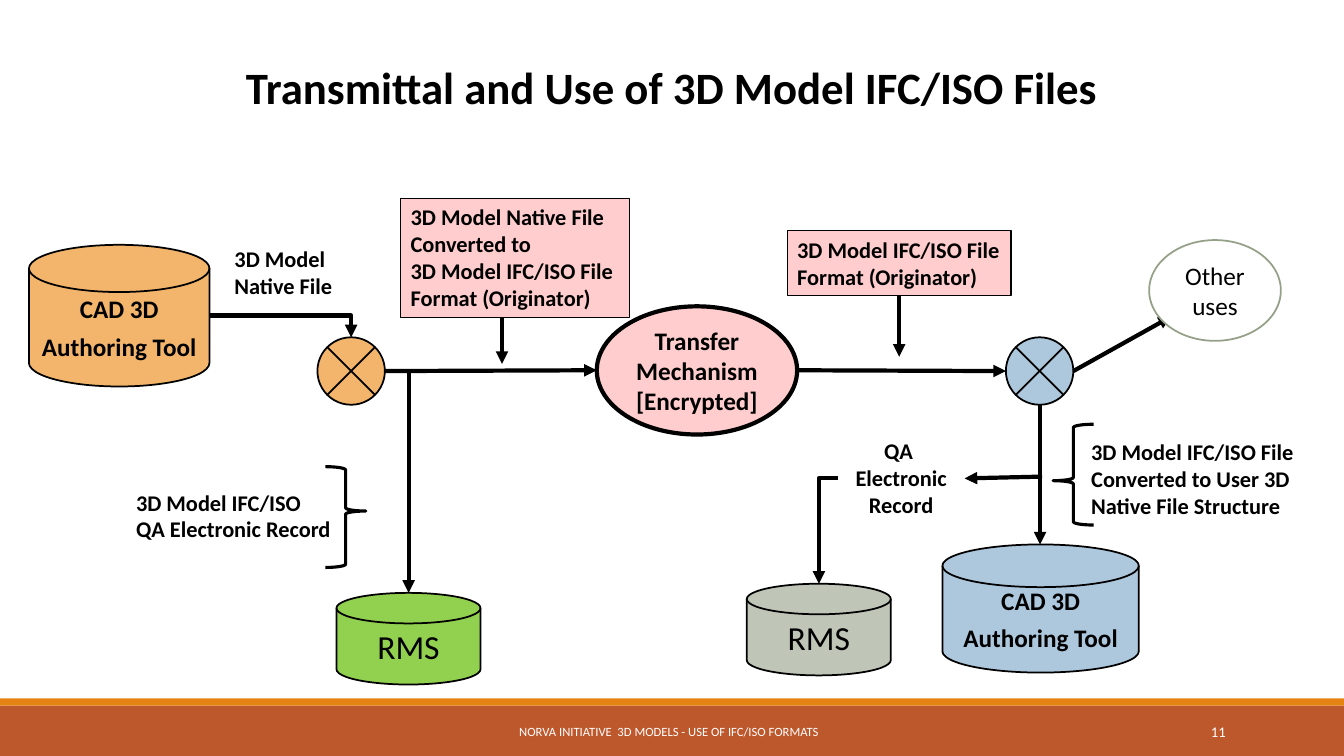
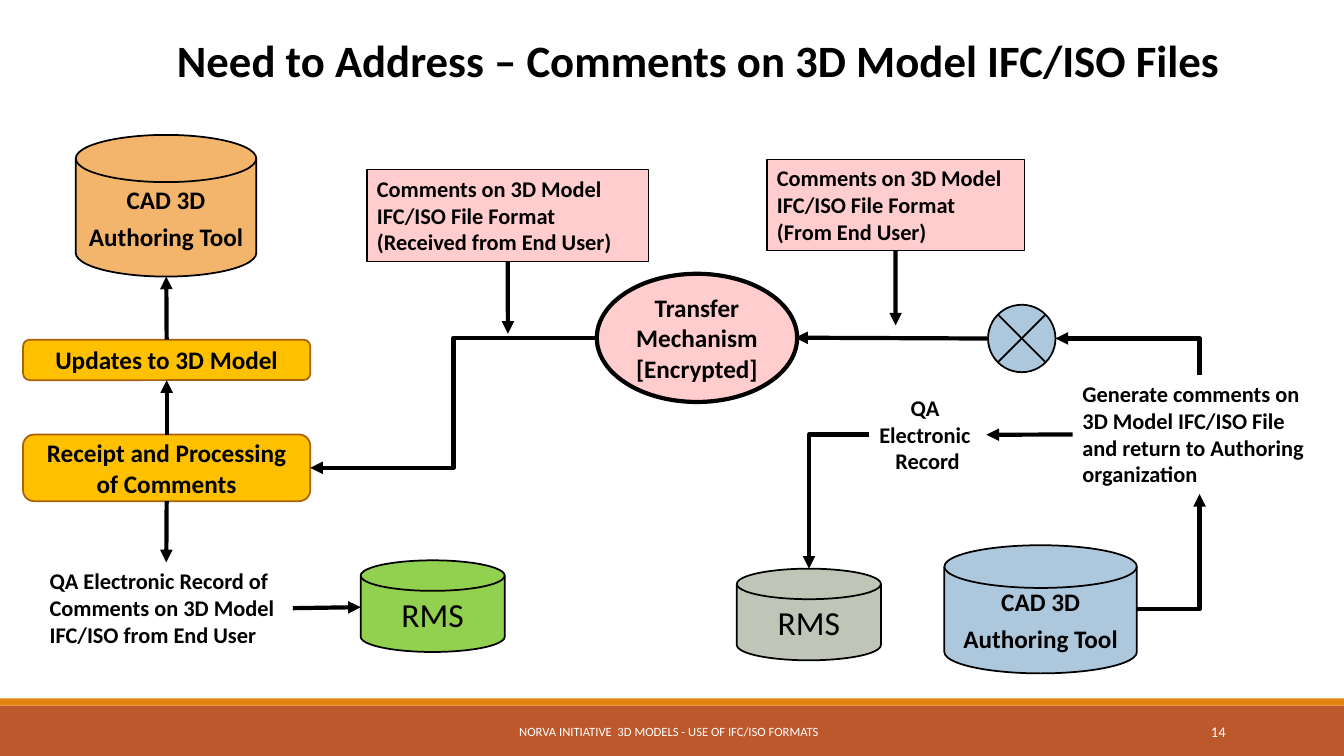
from dataclasses import dataclass, replace
from enum import Enum
from typing import NamedTuple, Optional, Union

from pptx import Presentation
from pptx.dml.color import RGBColor
from pptx.enum.shapes import MSO_CONNECTOR, MSO_SHAPE
from pptx.enum.text import MSO_ANCHOR, PP_ALIGN
from pptx.oxml.ns import qn
from pptx.oxml.xmlchemy import OxmlElement
from pptx.shapes.autoshape import Shape
from pptx.slide import Slide
from pptx.util import Cm, Pt

SLIDE_WIDTH, SLIDE_HEIGHT = 33.87, 19.05
FONT = "Calibri"
BLACK, WHITE = "000000", "FFFFFF"
ORANGE, BLUE, PINK = "F3B56C", "ADC8DD", "FFCDCD"
GREEN, GRAY, AMBER = "92D050", "BFC6B8", "FFC000"
FOOTER_TEXT = "NORVA INITIATIVE  3D MODELS - USE OF IFC/ISO FORMATS"
TOOL_LINES = ("CAD 3D", "Authoring Tool")
TRANSFER_LINES = ("Transfer Mechanism", "[Encrypted]")


@dataclass(frozen=True)
class Style:
    preset: Optional[MSO_SHAPE] = None
    fill: Optional[str] = None
    line: Optional[str] = None
    line_width: float = 1.25
    size: float = 18
    bold: bool = True
    color: str = BLACK
    align: PP_ALIGN = PP_ALIGN.CENTER
    anchor: MSO_ANCHOR = MSO_ANCHOR.MIDDLE
    wrap: bool = True
    line_gap: float = 0
    inset: float = 0.25
    rotation: float = 0
    adjustments: tuple[float, ...] = ()


class Area(NamedTuple):
    left: float
    top: float
    width: float
    height: float


class Point(NamedTuple):
    x: float
    y: float


class Joint(NamedTuple):
    shape: Shape
    side: int


class Route(Enum):
    STRAIGHT = "line"
    CORNER = "bentConnector2"
    ELBOW = "bentConnector3"


@dataclass(frozen=True)
class Arrow:
    start: Union[Point, Joint]
    end: Union[Point, Joint]
    route: Route = Route.STRAIGHT
    points_back: bool = False


TOP, LEFT, BOTTOM, RIGHT = range(4)

BAND = Style(MSO_SHAPE.RECTANGLE, "BD582C")
STRIP = replace(BAND, fill="E48312")
TITLE = Style(size=32, anchor=MSO_ANCHOR.TOP)
FOOTER = Style(size=9, bold=False, color=WHITE)
NUMBER = replace(FOOTER, size=10.5, align=PP_ALIGN.RIGHT)
TOOL = Style(MSO_SHAPE.FLOWCHART_MAGNETIC_DISK, ORANGE, BLACK, line_gap=5)
USER_TOOL = replace(TOOL, fill=BLUE)
RECORDS = replace(TOOL, fill=GREEN, size=24, bold=False)
USER_RECORDS = replace(RECORDS, fill=GRAY)
JUNCTION = Style(MSO_SHAPE.FLOWCHART_SUMMING_JUNCTION, ORANGE, BLACK)
USER_JUNCTION = replace(JUNCTION, fill=BLUE)
TRANSFER = Style(MSO_SHAPE.OVAL, PINK, BLACK, 3, inset=0.15)
OTHER_USES = Style(MSO_SHAPE.OVAL, WHITE, "94A088", bold=False)
STEP = Style(MSO_SHAPE.ROUNDED_RECTANGLE, AMBER, "A9610D")
LABEL = Style(size=16, align=PP_ALIGN.LEFT, anchor=MSO_ANCHOR.TOP)
TIGHT_LABEL = replace(LABEL, wrap=False)
CENTERED_LABEL = replace(LABEL, align=PP_ALIGN.CENTER)
NOTE = replace(LABEL, preset=MSO_SHAPE.RECTANGLE, fill=PINK, line=BLACK,
               line_width=0.75)
BRACE = Style(MSO_SHAPE.RIGHT_BRACE, line=BLACK, line_width=2.25,
              adjustments=(0.08, 0.44))


def rgb(hex_color: str) -> RGBColor:
    return RGBColor.from_string(hex_color)


def write_lines(shape: Shape, style: Style, lines: tuple[str, ...]) -> None:
    frame = shape.text_frame
    frame.text = "\n".join(lines)
    frame.word_wrap = style.wrap
    frame.vertical_anchor = style.anchor
    frame.margin_left = frame.margin_right = Cm(style.inset)
    for index, paragraph in enumerate(frame.paragraphs):
        paragraph.alignment = style.align
        if index and style.line_gap:
            paragraph.space_before = Pt(style.line_gap)
        for run in paragraph.runs:
            run.font.name = FONT
            run.font.size = Pt(style.size)
            run.font.bold = style.bold
            run.font.color.rgb = rgb(style.color)


def draw_node(slide: Slide, style: Style, area: Area, *lines: str) -> Shape:
    box = [Cm(length) for length in area]
    if style.preset is None:
        shape = slide.shapes.add_textbox(*box)
    else:
        shape = slide.shapes.add_shape(style.preset, *box)
        shape.shadow.inherit = False
        shape.rotation = style.rotation
        for index, value in enumerate(style.adjustments):
            shape.adjustments[index] = value
        if style.fill:
            shape.fill.solid()
            shape.fill.fore_color.rgb = rgb(style.fill)
        else:
            shape.fill.background()
        if style.line:
            shape.line.color.rgb = rgb(style.line)
            shape.line.width = Pt(style.line_width)
        else:
            shape.line.fill.background()
    if lines:
        write_lines(shape, style, lines)
    return shape


def locate(end: Union[Point, Joint]) -> tuple[int, int]:
    if isinstance(end, Point):
        return Cm(end.x), Cm(end.y)
    shape = end.shape
    across = {LEFT: 0, RIGHT: 2}.get(end.side, 1)
    down = {TOP: 0, BOTTOM: 2}.get(end.side, 1)
    return (shape.left + shape.width * across // 2,
            shape.top + shape.height * down // 2)


def draw_arrow(slide: Slide, arrow: Arrow) -> None:
    straight = arrow.route is Route.STRAIGHT
    kind = MSO_CONNECTOR.STRAIGHT if straight else MSO_CONNECTOR.ELBOW
    connector = slide.shapes.add_connector(
        kind, *locate(arrow.start), *locate(arrow.end))
    if isinstance(arrow.start, Joint):
        connector.begin_connect(*arrow.start)
    if isinstance(arrow.end, Joint):
        connector.end_connect(*arrow.end)
    connector.line.color.rgb = rgb(BLACK)
    connector.line.width = Pt(3)
    properties = connector._element.spPr
    properties.find(qn("a:prstGeom")).set("prst", arrow.route.value)
    tip = OxmlElement("a:headEnd" if arrow.points_back else "a:tailEnd")
    tip.set("type", "triangle")
    properties.find(qn("a:ln")).append(tip)
    properties.append(OxmlElement("a:effectLst"))


def draw_arrows(slide: Slide, *arrows: Arrow) -> None:
    for arrow in arrows:
        draw_arrow(slide, arrow)


def draw_tool(slide: Slide, left: float, top: float) -> Shape:
    return draw_node(slide, TOOL, Area(left, top, 4.55, 3.57), *TOOL_LINES)


def draw_user_tool(slide: Slide, left: float, top: float, width: float) -> Shape:
    return draw_node(slide, USER_TOOL, Area(left, top, width, 3.23), *TOOL_LINES)


def draw_records(slide: Slide, style: Style, left: float, top: float) -> Shape:
    return draw_node(slide, style, Area(left, top, 3.63, 2.31), "RMS")


def draw_junction(slide: Slide, style: Style, left: float, top: float) -> Shape:
    return draw_node(slide, style, Area(left, top, 1.7, 1.7))


def draw_transfer(slide: Slide, top: float) -> Shape:
    return draw_node(slide, TRANSFER, Area(15.04, top, 5.05, 3.23), *TRANSFER_LINES)


def add_framed_slide(presentation: Presentation, title: str, title_area: Area,
                     number: int) -> Slide:
    slide = presentation.slides.add_slide(presentation.slide_layouts[6])
    draw_node(slide, BAND, Area(0, 17.78, SLIDE_WIDTH, 1.27))
    draw_node(slide, STRIP, Area(0, 17.6, SLIDE_WIDTH, 0.18))
    draw_node(slide, TITLE, title_area, title)
    draw_node(slide, FOOTER, Area(10.16, 17.93, 13.39, 1.02), FOOTER_TEXT)
    draw_node(slide, NUMBER, Area(27.51, 17.93, 3.63, 1.02), str(number))
    return slide


def build_transmittal(presentation: Presentation) -> None:
    slide = add_framed_slide(
        presentation, "Transmittal and Use of 3D Model IFC/ISO Files",
        Area(2.82, 1.37, 28.22, 1.63), 11)
    draw_tool(slide, 0.73, 6.17)
    draw_junction(slide, JUNCTION, 8, 8.5)
    draw_junction(slide, USER_JUNCTION, 25.35, 8.5)
    draw_user_tool(slide, 23.75, 13.72, 4.95)
    draw_transfer(slide, 7.72)
    draw_records(slide, RECORDS, 8.48, 14.94)
    draw_records(slide, USER_RECORDS, 18.82, 14.71)
    draw_node(slide, TIGHT_LABEL, Area(5.66, 6.05, 3, 1.63),
              "3D Model", "Native File")
    draw_node(slide, TIGHT_LABEL, Area(3.18, 12.19, 5.49, 1.63),
              "3D Model IFC/ISO", "QA Electronic Record")
    draw_node(slide, NOTE, Area(10.1, 5, 5.77, 3),
              "3D Model Native File Converted to",
              "3D Model IFC/ISO File Format (Originator)")
    sent_note = draw_node(slide, NOTE, Area(19.84, 5.82, 5.64, 1.63),
                          "3D Model IFC/ISO File Format (Originator)")
    draw_node(slide, LABEL, Area(27.25, 10.92, 5.89, 2.31),
              "3D Model IFC/ISO File Converted to User 3D",
              "Native File Structure")
    draw_node(slide, BRACE, Area(8.2, 11.76, 1.02, 2.54))
    draw_node(slide, replace(BRACE, rotation=180), Area(26.54, 10.69, 1.02, 2.54))
    qa_record = draw_node(slide, CENTERED_LABEL, Area(21.11, 10.9, 3.2, 2.31),
                          "QA ", "Electronic Record")
    draw_arrows(
        slide,
        Arrow(Point(5.28, 7.95), Point(8.85, 8.5), Route.CORNER),
        Arrow(Point(9.7, 9.35), Point(15.04, 9.33)),
        Arrow(Point(20.09, 9.33), Point(25.35, 9.35)),
        Arrow(Point(26.21, 10.2), Point(26.21, 13.72)),
        Arrow(Joint(sent_note, BOTTOM), Point(22.66, 8.99)),
        Arrow(Point(12.65, 8), Point(12.65, 9.17)),
        Arrow(Point(9.7, 9.35), Point(10.3, 14.94), Route.CORNER),
        Arrow(Point(21.11, 12.05), Point(20.64, 14.71), Route.CORNER),
        Arrow(Point(26.26, 12.01), Joint(qa_record, RIGHT)),
        Arrow(Point(27.05, 9.35), Point(29.51, 7.98)),
    )
    draw_node(slide, OTHER_USES, Area(28.96, 6.05, 3.32, 2.54), "Other uses")


def build_comments(presentation: Presentation) -> None:
    slide = add_framed_slide(
        presentation, "Need to Address – Comments on 3D Model IFC/ISO Files",
        Area(3.43, 0.69, 28.35, 1.63), 14)
    draw_tool(slide, 1.91, 3.4)
    draw_junction(slide, USER_JUNCTION, 24.9, 7.68)
    draw_user_tool(slide, 23.8, 13.74, 4.85)
    draw_transfer(slide, 6.9)
    draw_records(slide, RECORDS, 9.09, 14.12)
    draw_records(slide, USER_RECORDS, 18.57, 14.33)
    received_note = draw_node(
        slide, NOTE, Area(9.25, 4.28, 7.09, 2.31),
        "Comments on 3D Model IFC/ISO File Format (Received from End User)")
    sent_note = draw_node(
        slide, NOTE, Area(19.33, 4.01, 6.48, 2.31),
        "Comments on 3D Model IFC/ISO File Format (From End User)")
    comment_record = draw_node(
        slide, TIGHT_LABEL, Area(1, 14.17, 6.38, 2.31),
        "QA Electronic Record of", "Comments on 3D Model", "IFC/ISO from End User")
    generate = draw_node(
        slide, LABEL, Area(27.03, 9.45, 6.38, 3),
        "Generate comments on 3D Model IFC/ISO File and return to Authoring organization")
    qa_record = draw_node(
        slide, replace(CENTERED_LABEL, wrap=False), Area(21.89, 9.8, 2.97, 2.31),
        "QA ", "Electronic ", "Record")
    receipt = draw_node(slide, STEP, Area(0.58, 10.95, 7.24, 1.68),
                        "Receipt and Processing of Comments")
    updates = draw_node(slide, STEP, Area(0.58, 8.56, 7.24, 1.02),
                        "Updates to 3D Model")
    draw_arrows(
        slide,
        Arrow(Point(24.87, 8.53), Point(20.04, 8.51)),
        Arrow(Joint(sent_note, BOTTOM), Point(22.57, 8.2)),
        Arrow(Joint(received_note, BOTTOM), Point(12.8, 8.41)),
        Arrow(Point(28.65, 15.35), Point(30.23, 12.45), Route.CORNER),
        Arrow(Point(26.6, 8.53), Point(30.23, 9.45), Route.CORNER, points_back=True),
        Arrow(Point(21.89, 10.95), Point(20.39, 14.33), Route.CORNER),
        Arrow(Joint(generate, LEFT), Joint(qa_record, RIGHT)),
        Arrow(Joint(comment_record, RIGHT), Point(9.09, 15.3)),
        Arrow(Point(15.04, 8.51), Joint(receipt, RIGHT), Route.ELBOW),
        Arrow(Joint(receipt, BOTTOM), Joint(comment_record, TOP)),
        Arrow(Joint(receipt, TOP), Joint(updates, BOTTOM)),
        Arrow(Joint(updates, TOP), Point(4.19, 6.97)),
    )


def main() -> None:
    presentation = Presentation()
    presentation.slide_width = Cm(SLIDE_WIDTH)
    presentation.slide_height = Cm(SLIDE_HEIGHT)
    build_transmittal(presentation)
    build_comments(presentation)
    presentation.save("out.pptx")


if __name__ == "__main__":
    main()
